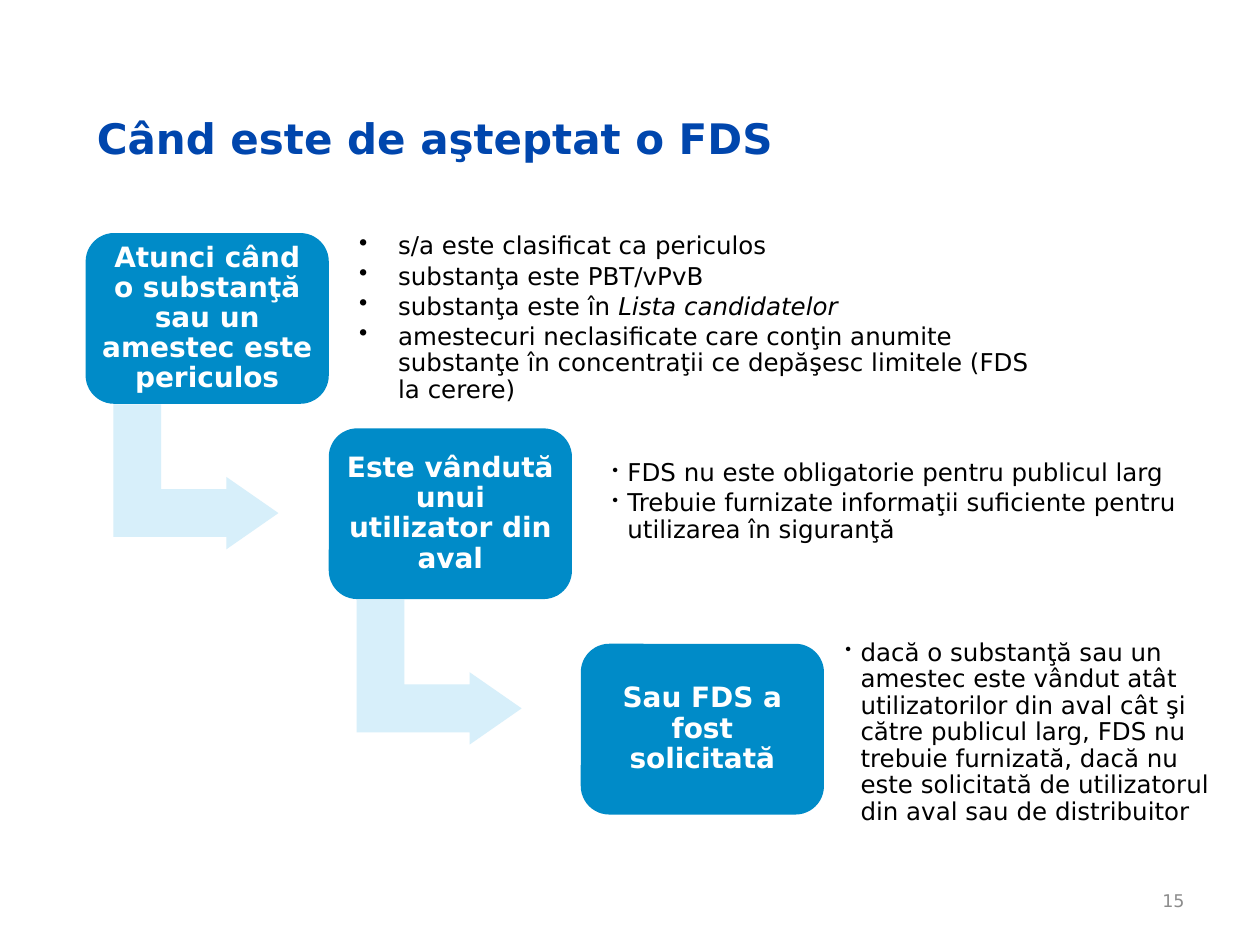
from lxml import etree
from pptx import Presentation
from pptx.dml.color import RGBColor
from pptx.enum.shapes import MSO_SHAPE
from pptx.enum.text import MSO_ANCHOR, PP_ALIGN
from pptx.oxml.ns import qn
from pptx.util import Inches, Pt

ROUND_RECT = MSO_SHAPE.ROUNDED_RECTANGLE
BENT_ARROW = MSO_SHAPE.BENT_UP_ARROW
MIDDLE = MSO_ANCHOR.MIDDLE
LEFT, CENTER, RIGHT = PP_ALIGN.LEFT, PP_ALIGN.CENTER, PP_ALIGN.RIGHT

WIDTH, HEIGHT = Inches(10), Inches(7.5)
COLS, ROWS = 100, 75
FONT = "DejaVu Sans"
TITLE_BLUE, STEP_BLUE, ARROW_BLUE = "0046AD", "008BC8", "D7EFFA"
WHITE, BLACK, GREY = "FFFFFF", "000000", "8C8C8C"
STEP_W, STEP_H = 19.3, 13.55

STEPS = [
    {
        "at": (6.8, 18.5),
        "label": "Atunci când o substanţă sau un amestec este periculos",
        "notes_at": (27.9, 18.6, 55.1, 13.4),
        "indent": 0.31,
        "bullet_size": 100,
        "notes": [
            [("s/a este clasificat ca periculos", False)],
            [("substanţa este PBT/vPvB", False)],
            [("substanţa este în ", False), ("Lista candidatelor", True)],
            [("amestecuri neclasificate care conţin anumite substanţe în "
              "concentraţii ce depăşesc limitele (FDS la cerere)", False)],
        ],
    },
    {
        "at": (26.1, 34),
        "label": "Este vândută unui utilizator din aval",
        "notes_at": (48, 34.4, 46.1, 10.9),
        "indent": 0.12,
        "bullet_size": 70,
        "notes": [
            [("FDS nu este obligatorie pentru publicul larg", False)],
            [("Trebuie furnizate informaţii suficiente pentru utilizarea "
              "în siguranţă", False)],
        ],
    },
    {
        "at": (46.1, 51.1),
        "label": "Sau FDS a fost solicitată",
        "notes_at": (66.5, 49.3, 32.3, 17.7),
        "indent": 0.12,
        "bullet_size": 70,
        "notes": [
            [("dacă o substanţă sau un amestec este vândut atât utilizatorilor "
              "din aval cât şi către publicul larg, FDS nu trebuie furnizată, "
              "dacă nu este solicitată de utilizatorul din aval sau de "
              "distribuitor", False)],
        ],
    },
]


def rgb(color):
    """Turn a hex string into a colour."""
    return RGBColor.from_string(color)


def grid(col, row, cols, rows):
    """Turn a grid area into left, top, width and height."""
    return (int(WIDTH * col / COLS), int(HEIGHT * row / ROWS),
            int(WIDTH * cols / COLS), int(HEIGHT * rows / ROWS))


def set_frame(tf, inset):
    """Wrap the text, centre it vertically and set even side insets."""
    tf.word_wrap = True
    tf.vertical_anchor = MIDDLE
    tf.margin_left = tf.margin_right = Inches(inset)
    tf.margin_top = tf.margin_bottom = Inches(0.06)


def add_run(p, text, size, color, bold=False, italic=False):
    """Add one formatted run to a paragraph."""
    r = p.add_run()
    r.text = text
    r.font.name = FONT
    r.font.size = Pt(size)
    r.font.color.rgb = rgb(color)
    r.font.bold = bold
    r.font.italic = italic


def add_line(s, area, text, size, color, align=LEFT, bold=False):
    """Add a text box with a single paragraph."""
    tf = s.shapes.add_textbox(*grid(*area)).text_frame
    set_frame(tf, 0.1)
    p = tf.paragraphs[0]
    p.alignment = align
    add_run(p, text, size, color, bold)


def add_filled(s, kind, area, color):
    """Add a flat preset shape without outline or shadow."""
    sp = s.shapes.add_shape(kind, *grid(*area))
    sp.shadow.inherit = False
    sp.fill.solid()
    sp.fill.fore_color.rgb = rgb(color)
    sp.line.fill.background()
    return sp


def add_arrow(s, col, row):
    """Add the bent arrow that leaves the step at this grid position."""
    sp = add_filled(s, BENT_ARROW, (col + 3, row + 12.8, 11.5, 13.1), ARROW_BLUE)
    sp.rotation = 90
    for i, value in enumerate((0.33, 0.25, 0.36)):
        sp.adjustments[i] = value


def add_step(s, col, row, label):
    """Add a rounded step box with its label."""
    sp = add_filled(s, ROUND_RECT, (col, row, STEP_W, STEP_H), STEP_BLUE)
    set_frame(sp.text_frame, 0.06)
    p = sp.text_frame.paragraphs[0]
    p.alignment = CENTER
    p.line_spacing = 0.9
    add_run(p, label, 16, WHITE, bold=True)


def set_bullet(p, indent, size):
    """Give a paragraph a hanging bullet of a percentage size."""
    pPr = p._p.get_or_add_pPr()
    pPr.set("marL", str(Inches(indent)))
    pPr.set("indent", str(-Inches(indent)))
    etree.SubElement(pPr, qn("a:buSzPct"), val=str(size * 1000))
    etree.SubElement(pPr, qn("a:buChar"), char="•")


def add_notes(s, area, notes, indent, bullet_size):
    """Add the bulleted text beside a step."""
    tf = s.shapes.add_textbox(*grid(*area)).text_frame
    set_frame(tf, 0.06)
    for i, runs in enumerate(notes):
        p = tf.add_paragraph() if i else tf.paragraphs[0]
        p.line_spacing = 0.9
        p.space_after = Pt(2.1)
        set_bullet(p, indent, bullet_size)
        for text, italic in runs:
            add_run(p, text, 14, BLACK, italic=italic)


def main():
    """Build the slide and save it."""
    prs = Presentation()
    prs.slide_width, prs.slide_height = WIDTH, HEIGHT
    s = prs.slides.add_slide(prs.slide_layouts[6])
    add_line(s, (6.7, 4.7, 90, 12.5), "Când este de aşteptat o FDS", 24,
             TITLE_BLUE, bold=True)
    for step in STEPS:
        if step is not STEPS[-1]:
            add_arrow(s, *step["at"])
        add_step(s, *step["at"], step["label"])
        add_notes(s, step["notes_at"], step["notes"], step["indent"],
                  step["bullet_size"])
    add_line(s, (71.7, 69.5, 23.3, 4), "15", 10, GREY, align=RIGHT)
    prs.save("out.pptx")


if __name__ == "__main__":
    main()
